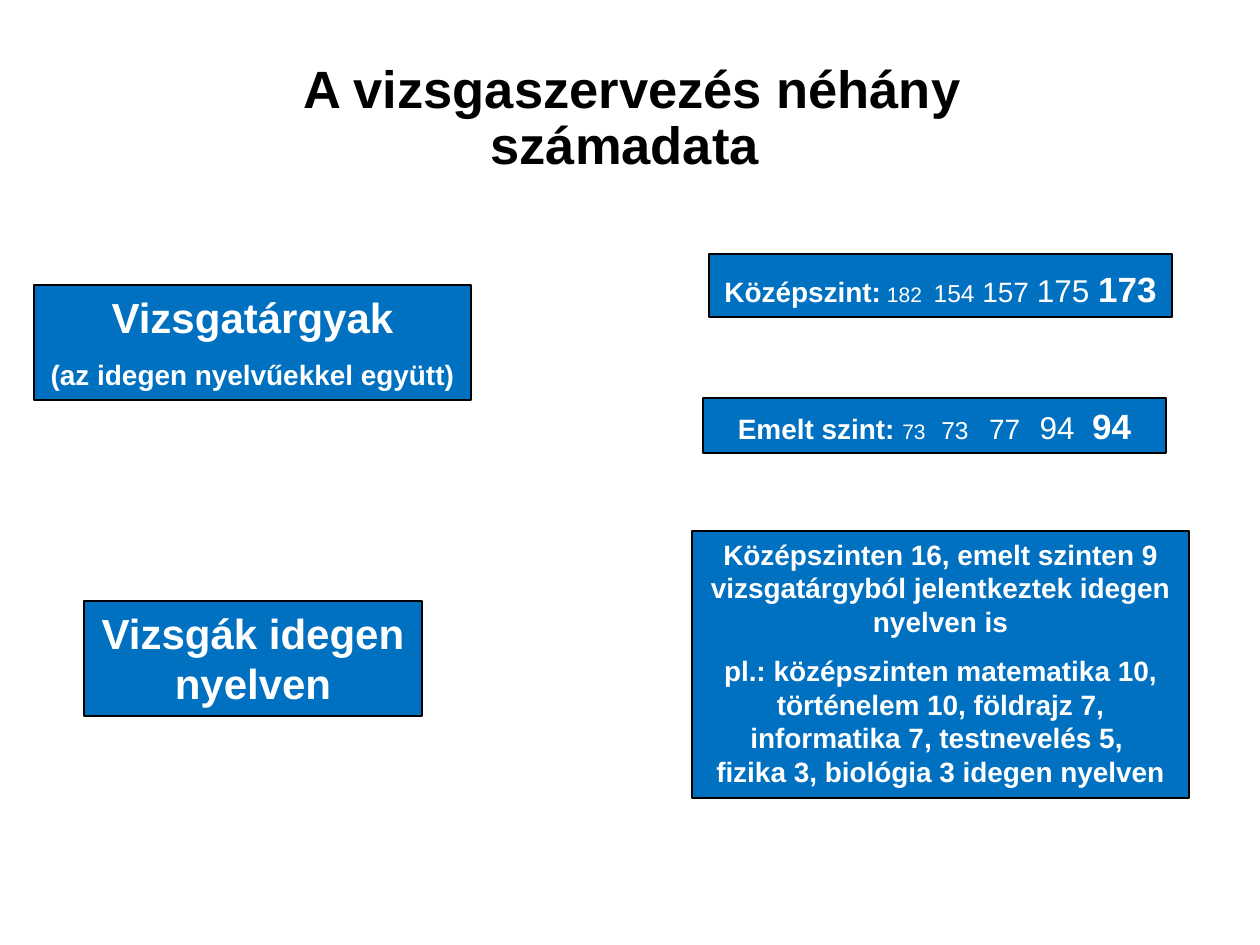
from pptx import Presentation
from pptx.dml.color import RGBColor
from pptx.enum.shapes import MSO_SHAPE
from pptx.enum.text import MSO_ANCHOR, MSO_AUTO_SIZE, PP_ALIGN
from pptx.util import Emu, Pt

PX_PER_INCH = 126
FONT = "Arial"
BLACK, WHITE, BLUE = "000000", "FFFFFF", "0070C0"


def px(length):
    """Convert whole pixels to EMU."""
    return Emu(round(length * 914400 / PX_PER_INCH))


def color(hex_string):
    """Turn a hex string into a colour."""
    return RGBColor.from_string(hex_string)


def place(shape, box):
    """Move a shape to a (left, top, width, height) box in pixels."""
    shape.left, shape.top, shape.width, shape.height = map(px, box)


def add_run(paragraph, text, size, bold=True, hex_string=WHITE, spacing=0):
    """Add one formatted run, with optional letter spacing in points."""
    run = paragraph.add_run()
    run.text = text
    run.font.name = FONT
    run.font.size = Pt(size)
    run.font.bold = bold
    run.font.color.rgb = color(hex_string)
    if spacing:
        run._r.get_or_add_rPr().set("spc", str(round(spacing * 100)))


def add_title(slide, box, text):
    """Fill the title placeholder."""
    title = slide.shapes.title
    place(title, box)
    frame = title.text_frame
    frame.auto_size = MSO_AUTO_SIZE.NONE
    frame.vertical_anchor = MSO_ANCHOR.MIDDLE
    paragraph = frame.paragraphs[0]
    paragraph.alignment = PP_ALIGN.CENTER
    paragraph.line_spacing = 0.9
    add_run(paragraph, text, 30, hex_string=BLACK)


def add_panel(slide, box, paragraphs):
    """Draw a blue panel; each paragraph is a list of runs, None breaking the line."""
    panel = slide.shapes.add_shape(MSO_SHAPE.RECTANGLE, *map(px, box))
    panel.shadow.inherit = False
    panel.fill.solid()
    panel.fill.fore_color.rgb = color(BLUE)
    panel.line.color.rgb = color(BLACK)
    panel.line.width = Pt(0.75)
    frame = panel.text_frame
    frame.word_wrap = True
    frame.auto_size = MSO_AUTO_SIZE.SHAPE_TO_FIT_TEXT
    frame.vertical_anchor = MSO_ANCHOR.TOP
    for index, runs in enumerate(paragraphs):
        paragraph = frame.add_paragraph() if index else frame.paragraphs[0]
        paragraph.alignment = PP_ALIGN.CENTER
        if index:
            paragraph.space_before = Pt(9)
        for run in runs:
            if run is None:
                paragraph.add_line_break()
            else:
                add_run(paragraph, *run)


def add_subject_panels(slide):
    """Place the exam subject heading and its counts for both levels."""
    add_panel(slide, (34, 285, 437, 115), [
        [("Vizsgatárgyak", 24)],
        [("(az idegen nyelvűekkel együtt)", 16)],
    ])
    add_panel(slide, (709, 254, 463, 63), [[
        ("Középszint:", 16), (" 182", 12, False), (" ", 24, False),
        ("154", 14, False), (" 157 ", 16, False), ("175 ", 18, False), ("173", 20),
    ]])
    add_panel(slide, (703, 398, 463, 55), [[
        ("Emelt szint: ", 16), ("73", 12, False), (" ", 18, False, WHITE, 3.9),
        ("73", 14, False), (" ", 14, False, WHITE, 7.8), ("77", 16, False),
        (" ", 20, False, WHITE, 5.6), ("94", 18, False),
        (" ", 18, False, WHITE, 5), ("94", 20),
    ]])


def add_language_panels(slide):
    """Place the foreign language exam heading and its details."""
    add_panel(slide, (84, 601, 338, 115), [[("Vizsgák idegen nyelven", 24)]])
    add_panel(slide, (692, 531, 497, 267), [
        [("Középszinten 16, emelt szinten 9 vizsgatárgyból "
          "jelentkeztek idegen nyelven is", 16)],
        [("pl.: középszinten matematika 10, történelem 10, földrajz 7, "
          "informatika 7, testnevelés 5, ", 16), None,
         ("fizika 3, biológia 3 idegen nyelven", 16)],
    ])


def main():
    """Build and save the presentation."""
    presentation = Presentation()
    presentation.slide_width, presentation.slide_height = px(1260), px(945)
    slide = presentation.slides.add_slide(presentation.slide_layouts[5])
    add_title(slide, (176, 55, 912, 129), "A vizsgaszervezés néhány számadata ")
    add_subject_panels(slide)
    add_language_panels(slide)
    presentation.save("out.pptx")


if __name__ == "__main__":
    main()
